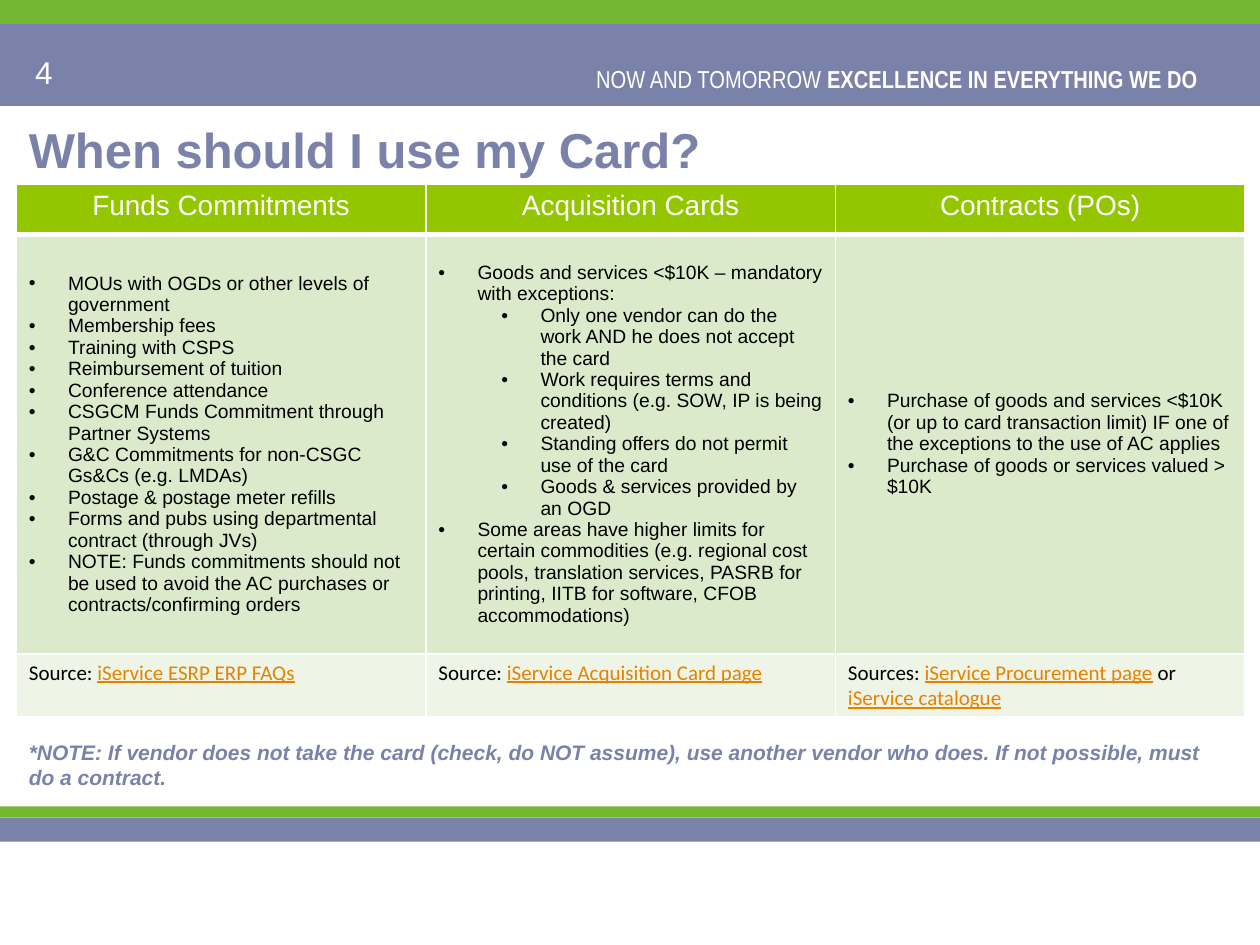
from dataclasses import dataclass

from lxml import etree
from pptx import Presentation
from pptx import util as u
from pptx.dml.color import RGBColor
from pptx.enum import shapes, text
from pptx.oxml import ns

COLUMN = u.Inches(0.1)
ROW = u.Inches(0.1)
GREEN, BLUE, WHITE, BLACK, ORANGE = "73B632", "7A82AA", "FFFFFF", "000000", "E68200"
HEADER_FILL, BODY_FILL, SOURCE_FILL = "94C600", "DCEACC", "EEF5E7"

SLOGAN = dict(size=14, name="Arial Narrow", color=WHITE)
NUMBER = dict(size=18, name="Arial", color=WHITE)
TITLE = dict(size=28, name="Arial", color=BLUE, bold=True)
NOTE = dict(size=12, name="Arial", color=BLUE, bold=True, italic=True)
HEADING = dict(size=16, name="Arial", color=WHITE, bold=False)
ITEM = dict(size=11, name="Arial", color=BLACK, bold=False)
SOURCE = dict(size=12, name="Calibri", color=BLACK, bold=False)
LINK = dict(SOURCE, color=ORANGE, underline=True)

TOPICS = [
    dict(
        heading="Funds Commitments",
        items=[
            (0, "MOUs with OGDs or other levels of government"),
            (0, "Membership fees"),
            (0, "Training with CSPS"),
            (0, "Reimbursement of tuition"),
            (0, "Conference attendance"),
            (0, "CSGCM Funds Commitment through Partner Systems"),
            (0, "G&C Commitments for non-CSGC Gs&Cs (e.g. LMDAs)"),
            (0, "Postage & postage meter refills"),
            (0, "Forms and pubs using departmental contract (through JVs)"),
            (0, "NOTE: Funds commitments should not be used to avoid the AC "
                "purchases or contracts/confirming orders"),
        ],
        sources=[("Source: ", SOURCE), ("iService ESRP ERP FAQs", LINK)],
    ),
    dict(
        heading="Acquisition Cards",
        items=[
            (0, "Goods and services <$10K – mandatory with exceptions:"),
            (1, "Only one vendor can do the work AND he does not accept the card"),
            (1, "Work requires terms and conditions (e.g. SOW, IP is being created)"),
            (1, "Standing offers do not permit use of the card"),
            (1, "Goods & services provided by an OGD"),
            (0, "Some areas have higher limits for certain commodities (e.g. regional "
                "cost pools, translation services, PASRB for printing, IITB for "
                "software, CFOB accommodations)"),
        ],
        sources=[("Source: ", SOURCE), ("iService Acquisition Card page", LINK)],
    ),
    dict(
        heading="Contracts (POs)",
        items=[
            (0, "Purchase of goods and services <$10K (or up to card transaction "
                "limit) IF one of the exceptions to the use of AC applies"),
            (0, "Purchase of goods or services valued > $10K"),
        ],
        sources=[("Sources: ", SOURCE), ("iService Procurement page", LINK),
                 (" or ", SOURCE), ("iService catalogue", LINK)],
    ),
]


@dataclass
class Box:
    left: float
    top: float
    width: float
    height: float

    def inner(self, left, top, width, height):
        return Box(self.left + left, self.top + top, width, height)

    def lengths(self):
        return [int(self.left * COLUMN), int(self.top * ROW),
                int(self.width * COLUMN), int(self.height * ROW)]


def rgb(value):
    return RGBColor.from_string(value)


def paint(filled, color):
    filled.fill.solid()
    filled.fill.fore_color.rgb = rgb(color)


def write(para, spans, align=text.PP_ALIGN.LEFT):
    para.alignment = align
    for words, style in spans:
        span = para.add_run()
        span.text = words
        for key, value in style.items():
            if key == "color":
                span.font.color.rgb = rgb(value)
            else:
                setattr(span.font, key, u.Pt(value) if key == "size" else value)


def add_text(page, box, spans, align=text.PP_ALIGN.LEFT, anchor=text.MSO_ANCHOR.TOP):
    frame = page.shapes.add_textbox(*box.lengths()).text_frame
    frame.word_wrap = True
    frame.vertical_anchor = anchor
    write(frame.paragraphs[0], spans, align)


def add_band(page, box, color):
    band = page.shapes.add_shape(shapes.MSO_SHAPE.RECTANGLE, *box.lengths())
    band.shadow.inherit = False
    paint(band, color)
    band.line.fill.background()


def add_banner(page, box):
    add_band(page, box.inner(0, 1.9, box.width, box.height - 1.9), BLUE)
    add_band(page, box.inner(0, 0, box.width, 1.9), GREEN)
    add_text(page, box.inner(46, 4.6, 50.5, 3.4),
             [("NOW AND TOMORROW ", SLOGAN),
              ("EXCELLENCE IN EVERYTHING WE DO ", dict(SLOGAN, bold=True))],
             text.PP_ALIGN.RIGHT)
    add_text(page, box.inner(1.8, 3.7, 23.3, 4), [("4", NUMBER)])


def add_footer(page, box):
    add_band(page, box.inner(0, 0.9, box.width, box.height - 0.9), BLUE)
    add_band(page, box.inner(0, 0, box.width, 0.9), GREEN)


def add_bullet(para, level):
    para.level = level
    props = para._p.get_or_add_pPr()
    props.set("marL", str(u.Inches(0.31 + 0.5 * level)))
    props.set("indent", str(u.Inches(-0.31)))
    etree.SubElement(props, ns.qn("a:buFont")).set("typeface", "Arial")
    etree.SubElement(props, ns.qn("a:buChar")).set("char", "•")


def add_borders(cell, widths):
    props = cell._tc.get_or_add_tcPr()
    for place, (side, width) in enumerate(widths.items()):
        line = etree.Element(ns.qn(f"a:ln{side}"), w=str(u.Pt(width)))
        fill = etree.SubElement(line, ns.qn("a:solidFill"))
        etree.SubElement(fill, ns.qn("a:srgbClr")).set("val", WHITE)
        props.insert(place, line)


def fill_items(frame, items):
    for index, (level, words) in enumerate(items):
        para = frame.add_paragraph() if index else frame.paragraphs[0]
        add_bullet(para, level)
        write(para, [(words, ITEM)])


def add_topics(page, box, row_heights):
    table = page.shapes.add_table(len(row_heights), len(TOPICS), *box.lengths()).table
    for row, height in zip(table.rows, row_heights):
        row.height = int(height * ROW)
    for column, topic in enumerate(TOPICS):
        heading, body, source = [table.cell(row, column) for row in range(3)]
        write(heading.text_frame.paragraphs[0], [(topic["heading"], HEADING)],
              text.PP_ALIGN.CENTER)
        fill_items(body.text_frame, topic["items"])
        body.vertical_anchor = text.MSO_ANCHOR.MIDDLE
        write(source.text_frame.paragraphs[0], topic["sources"])
        for cell, color, top, bottom in ((heading, HEADER_FILL, 1, 3),
                                         (body, BODY_FILL, 3, 1),
                                         (source, SOURCE_FILL, 1, 1)):
            paint(cell, color)
            add_borders(cell, dict(L=1, R=1, T=top, B=bottom))


def main():
    deck = Presentation()
    deck.slide_width, deck.slide_height = 100 * COLUMN, 75 * ROW
    page = deck.slides.add_slide(deck.slide_layouts[6])
    add_banner(page, Box(0, 0, 100, 8.4))
    add_footer(page, Box(0, 64, 100, 2.8))
    add_text(page, Box(1.3, 7.5, 96.2, 8.6), [("When should I use my Card?", TITLE)],
             anchor=text.MSO_ANCHOR.MIDDLE)
    add_text(page, Box(1.3, 58.2, 97.5, 4.9),
             [("*NOTE: If vendor does not take the card (check, do NOT assume), use "
               "another vendor who does. If not possible, must do a contract.", NOTE)])
    add_topics(page, Box(1.3, 14.6, 97.5, 42.3), [4, 33.3, 5])
    deck.save("out.pptx")


if __name__ == "__main__":
    main()
